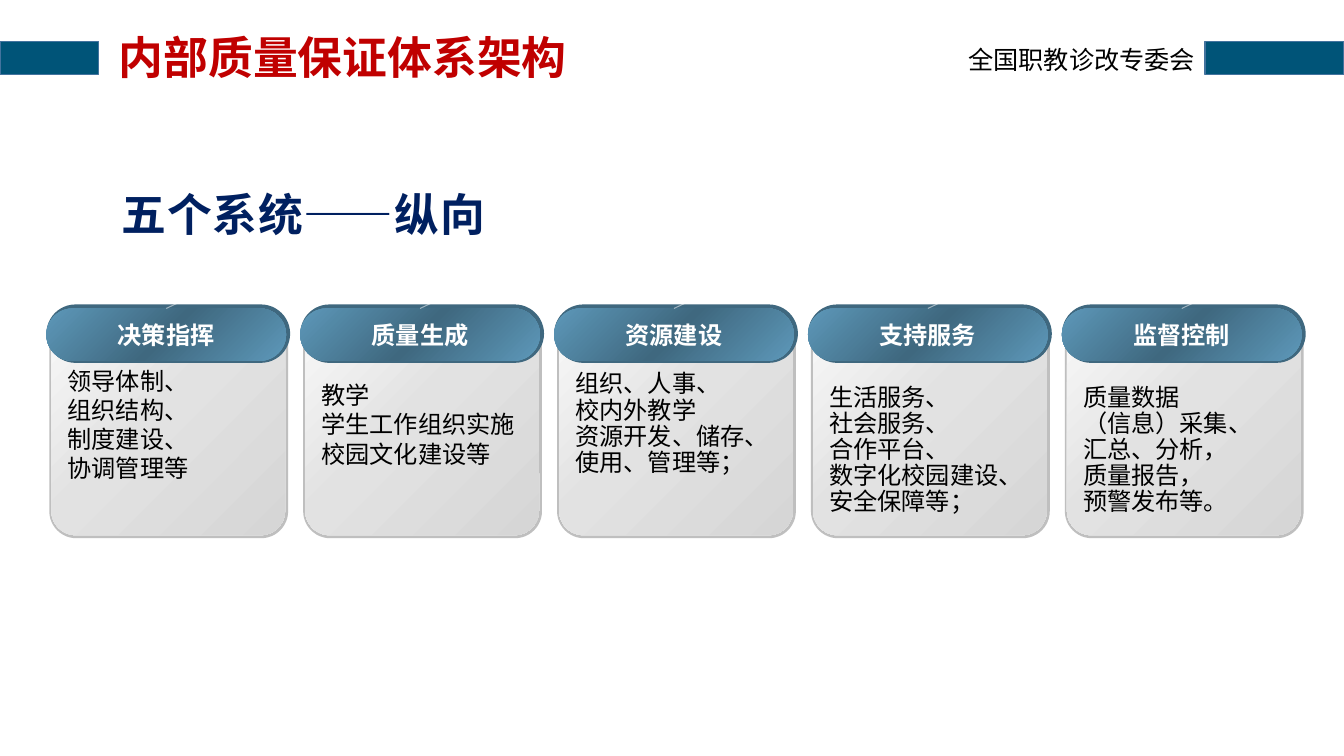
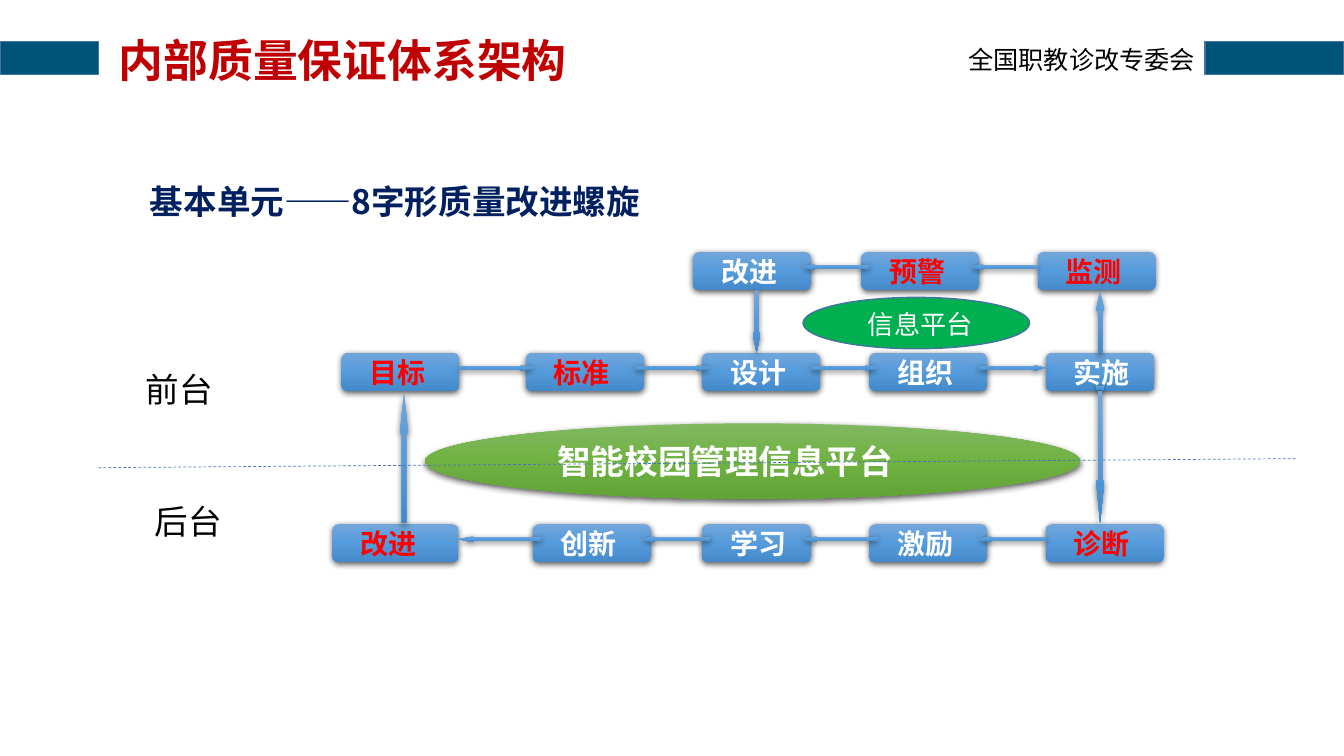
from dataclasses import dataclass

from lxml.etree import SubElement
from pptx import Presentation
from pptx.dml.color import RGBColor
from pptx.enum.dml import MSO_LINE
from pptx.enum.shapes import MSO_CONNECTOR, MSO_SHAPE
from pptx.enum.text import MSO_ANCHOR, PP_ALIGN
from pptx.oxml.ns import qn
from pptx.util import Inches, Pt


@dataclass(frozen=True)
class Theme:
    """Colours, gradients, fonts and type sizes of the deck."""
    font: str = "Noto Sans CJK SC"
    node_font: str = "Calibri"
    band: str = "005478"
    edge: str = "43739E"
    title: str = "C00000"
    heading: str = "002060"
    ink: str = "000000"
    white: str = "FFFFFF"
    alert: str = "FF0000"
    info: str = "00B050"
    divider: str = "4472C4"
    card_rim: str = "BFBFBF"
    pill_rim: str = "3F687F"
    card: tuple = ((0, "FAFAFA"), (45, "E2E2E2"), (100, "D6D6D6"))
    pill: tuple = ((0, "5D98B9"), (50, "3F687F"), (100, "5D98B9"))
    node: tuple = ((0, "71A6DB"), (50, "559BDB"), (100, "448ACA"))
    hub: tuple = ((0, "81B861"), (50, "6FB242"), (100, "62A336"))
    sz_title: float = 32
    sz_heading: float = 24
    sz_node: float = 20
    sz_org: float = 18
    sz_info: float = 18.7
    sz_card: float = 17.3


T = Theme()
TITLE = "内部质量保证体系架构"
ORG = "全国职教诊改专委会"
WIDTH, HEIGHT = 13.34, 7.5
SYSTEMS = [
    ("决策指挥", ["领导体制、", "组织结构、", "制度建设、", "协调管理等"], 1, 0),
    ("质量生成", ["教学", "学生工作组织实施", "校园文化建设等"], 1, 0),
    ("资源建设", ["组织、人事、", "校内外教学", "资源开发、储存、", "使用、管理等；"], 0.9, 0),
    ("支持服务", ["生活服务、", "社会服务、", "合作平台、", "数字化校园建设、", "安全保障等；"], 0.9, 0.52),
    ("监督控制", ["质量数据", "（信息）采集、", "汇总、分析，", "质量报告，", "预警发布等。"], 0.9, 0.52),
]
NODE_W, NODE_H = 1.17, 0.38
LOOP_ROWS = [
    (0, MSO_SHAPE.LEFT_ARROW,
     [("改进", 3.58, NODE_W), ("预警", 5.25, NODE_W), ("监测", 7, NODE_W)]),
    (1, MSO_SHAPE.RIGHT_ARROW,
     [("目标", 0.09, NODE_W), ("标准", 1.92, NODE_W), ("设计", 3.67, NODE_W),
      ("组织", 5.33, NODE_W), ("实施", 7.08, 1.08)]),
    (2.7, MSO_SHAPE.LEFT_ARROW,
     [("改进", 0, 1.25), ("创新", 1.99, NODE_W), ("学习", 3.67, 1.08),
      ("激励", 5.33, NODE_W), ("诊断", 7.08, NODE_W)]),
]
ALERTS = {(0, "预警"), (0, "监测"), (1, "目标"), (1, "标准"), (2.7, "改进"), (2.7, "诊断")}
RISERS = [
    (MSO_SHAPE.DOWN_ARROW, 7.58, 1.38, 1.31),
    (MSO_SHAPE.UP_ARROW, 0.67, 1.38, 1.31),
    (MSO_SHAPE.UP_ARROW, 7.58, 0.38, 0.62),
    (MSO_SHAPE.DOWN_ARROW, 4.17, 0.38, 0.62),
]


def rgb(color):
    """Turn a hex string into a colour."""
    return RGBColor.from_string(color)


def write(sp, lines, size, color, bold=False, align=PP_ALIGN.LEFT, anchor=MSO_ANCHOR.TOP,
          spacing=None, margins=(0.1, 0.05, 0.1, 0.05), font=T.font, wrap=True, tracking=0):
    """Fill a shape with one paragraph per line in a single style."""
    tf = sp.text_frame
    tf.word_wrap, tf.vertical_anchor = wrap, anchor
    tf.margin_left, tf.margin_top, tf.margin_right, tf.margin_bottom = map(Inches, margins)
    for i, line in enumerate(lines):
        p = tf.paragraphs[0] if i == 0 else tf.add_paragraph()
        p.add_run().text = line
        p.alignment, p.line_spacing = align, spacing
        p.font.size, p.font.bold, p.font.name = Pt(size), bold, font
        p.font.color.rgb = rgb(color)
        props = p._p.pPr.find(qn("a:defRPr"))
        SubElement(props, qn("a:ea")).set("typeface", T.font)
        if tracking:
            props.set("spc", str(tracking))


def textbox(s, box, lines, size, color, **style):
    """Add a text box at a box given in inches."""
    write(s.shapes.add_textbox(*map(Inches, box)), lines, size, color, **style)


def shape(s, kind, box, fill, angle=90, line=None, adj=(), shadow=False):
    """Add a preset shape with a solid colour or a gradient of stops."""
    sp = s.shapes.add_shape(kind, *map(Inches, box))
    sp.shadow.inherit = False
    for i, value in enumerate(adj):
        sp.adjustments[i] = value
    if isinstance(fill, str):
        sp.fill.solid()
        sp.fill.fore_color.rgb = rgb(fill)
    else:
        sp.fill.gradient()
        sp.fill.gradient_angle = 360 - angle
        stops = sp._element.spPr.find(qn("a:gradFill")).find(qn("a:gsLst"))
        stops.clear()
        for pos, color in fill:
            gs = SubElement(stops, qn("a:gs"), pos=str(pos * 1000))
            SubElement(gs, qn("a:srgbClr"), val=color)
    if line:
        sp.line.color.rgb = rgb(line)
        sp.line.width = Pt(1)
    else:
        sp.line.fill.background()
    if shadow:
        effects = sp._element.spPr.find(qn("a:effectLst"))
        outer = SubElement(effects, qn("a:outerShdw"), blurRad=str(Pt(4.5)),
                           dist=str(Pt(1.5)), dir="5400000", rotWithShape="0")
        SubElement(SubElement(outer, qn("a:srgbClr"), val=T.ink), qn("a:alpha"), val="63000")
    return sp


def line(s, ends, color, width, dash=MSO_LINE.SOLID, alpha=100):
    """Add a straight connector between two points."""
    c = s.shapes.add_connector(MSO_CONNECTOR.STRAIGHT, *map(Inches, ends))
    c.line.color.rgb = rgb(color)
    c.line.width, c.line.dash_style = Pt(width), dash
    SubElement(c._element.spPr, qn("a:effectLst"))
    if alpha < 100:
        tone = c._element.spPr.find(".//" + qn("a:srgbClr"))
        SubElement(tone, qn("a:alpha"), val=str(alpha * 1000))


def base_slide(prs, title_h):
    """Start a slide with its side bands, organisation name and title."""
    s = prs.slides.add_slide(prs.slide_layouts[6])
    for left, width in ((0, 0.98), (WIDTH - 1.38, 1.38)):
        shape(s, MSO_SHAPE.RECTANGLE, (left, 0.41, width, 0.33), T.band, line=T.edge)
    textbox(s, (9.42, 0.39, 2.54, 0.4), [ORG], T.sz_org, T.ink, align=PP_ALIGN.RIGHT)
    textbox(s, (1.08, 0.2, 7.16, title_h), [TITLE], T.sz_title, T.title, bold=True,
            anchor=MSO_ANCHOR.MIDDLE, spacing=0.9)
    return s


def system_card(s, x, y, name, items, spacing, drop):
    """Draw one system as a grey card under a blue pill."""
    card, pill = (2.32, 2.2), (2.38, 0.52)
    top, left = y + 0.05, x - 0.03
    shape(s, MSO_SHAPE.ROUNDED_RECTANGLE, (x, top, card[0] + 0.05, card[1] + 0.03),
          T.card_rim, adj=[0.12])
    body = shape(s, MSO_SHAPE.ROUNDED_RECTANGLE, (x + 0.02, top, *card), T.card, 45, adj=[0.11])
    write(body, items, T.sz_card, T.ink, anchor=MSO_ANCHOR.MIDDLE, spacing=spacing,
          margins=(0.09, 0.05 + drop, 0, 0.05), wrap=False)
    shape(s, MSO_SHAPE.ROUNDED_RECTANGLE, (left, y - 0.04, pill[0] + 0.04, pill[1] + 0.06),
          T.pill_rim, adj=[0.5])
    head = shape(s, MSO_SHAPE.ROUNDED_RECTANGLE, (left, y, *pill), T.pill, 45, adj=[0.5])
    write(head, [name], T.sz_card, T.white, bold=True, align=PP_ALIGN.CENTER,
          anchor=MSO_ANCHOR.MIDDLE, wrap=False)
    mid = left + pill[0] / 2
    line(s, (mid, y, mid + 0.7, y - 0.33), T.white, 0.75, alpha=50)


def systems_slide(prs):
    """Build the slide of the five vertical systems."""
    s = base_slide(prs, 0.8)
    textbox(s, (1.08, 1.78, 6.39, 0.67), ["五个系统——纵向"], T.sz_title, T.heading, bold=True,
            margins=(0.13, 0.07, 0.13, 0.07), tracking=50)
    for i, system in enumerate(SYSTEMS):
        system_card(s, 0.49 + 2.52 * i, 3.06, *system)


def loop_row(s, x, y, row, arrow, nodes):
    """Draw a row of linked steps."""
    for label, left, width in nodes:
        sp = shape(s, MSO_SHAPE.ROUNDED_RECTANGLE, (x + left, y + row, width, NODE_H),
                   T.node, shadow=True)
        write(sp, [label], T.sz_node, T.alert if (row, label) in ALERTS else T.white, bold=True,
              anchor=MSO_ANCHOR.MIDDLE, margins=(0.26, 0.07, 0, 0.07), font=T.node_font)
    for (_, left, width), (_, right, _) in zip(nodes, nodes[1:]):
        start = left + width - (0.08 if left > 1 else 0)
        length = right + (0.08 if right < 7 else 0) - start
        shape(s, arrow, (x + start, y + row + 0.12, length, 0.06), T.node,
              adj=[0.5, 3 * length], shadow=True)


def loop(s, x, y):
    """Draw the figure-eight loop from its top left corner."""
    for row in LOOP_ROWS:
        loop_row(s, x, y, *row)
    hub = shape(s, MSO_SHAPE.OVAL, (x + 0.92, y + 1.7, 6.5, 0.75), T.hub, shadow=True)
    write(hub, ["智能校园管理信息平台"], T.sz_heading, T.white, bold=True,
          anchor=MSO_ANCHOR.MIDDLE, margins=(0.36, 0.07, 0, 0.07), font=T.node_font)
    shape(s, MSO_SHAPE.RIGHT_ARROW, (x + 7.58, y + 1.32, 0.08, 0.06), T.node,
          adj=[0.5, 0.25], shadow=True)
    for kind, left, top, length in RISERS:
        shape(s, kind, (x + left, y + top, 0.08, length), T.node,
              adj=[0.5, 4 * length], shadow=True)
    info = shape(s, MSO_SHAPE.OVAL, (x + 4.67, y + 0.45, 2.25, 0.51), T.info, line=T.edge)
    write(info, ["信息平台"], T.sz_info, T.white, align=PP_ALIGN.CENTER,
          anchor=MSO_ANCHOR.MIDDLE, margins=(0.08, 0.02, 0, 0))


def spiral_slide(prs):
    """Build the slide of the quality improvement spiral."""
    s = base_slide(prs, 0.86)
    textbox(s, (1.39, 1.47, 5.2, 0.64), ["基本单元——8字形质量改进螺旋"], T.sz_heading, T.heading,
            bold=True, spacing=1.7)
    loop(s, 3.3, 2.5)
    line(s, (12.86, 4.55, 0.98, 4.64), T.divider, 0.5, MSO_LINE.DASH)
    for label, left, top in (("前台", 1.26, 3.64), ("后台", 1.35, 4.95)):
        textbox(s, (left, top, 1.04, 0.45), [label], T.sz_heading, T.ink,
                align=PP_ALIGN.CENTER, margins=(0.02, 0.02, 0.02, 0.02))


def main():
    """Build and save the deck."""
    prs = Presentation()
    prs.slide_width, prs.slide_height = Inches(WIDTH), Inches(HEIGHT)
    systems_slide(prs)
    spiral_slide(prs)
    prs.save("out.pptx")


if __name__ == "__main__":
    main()
